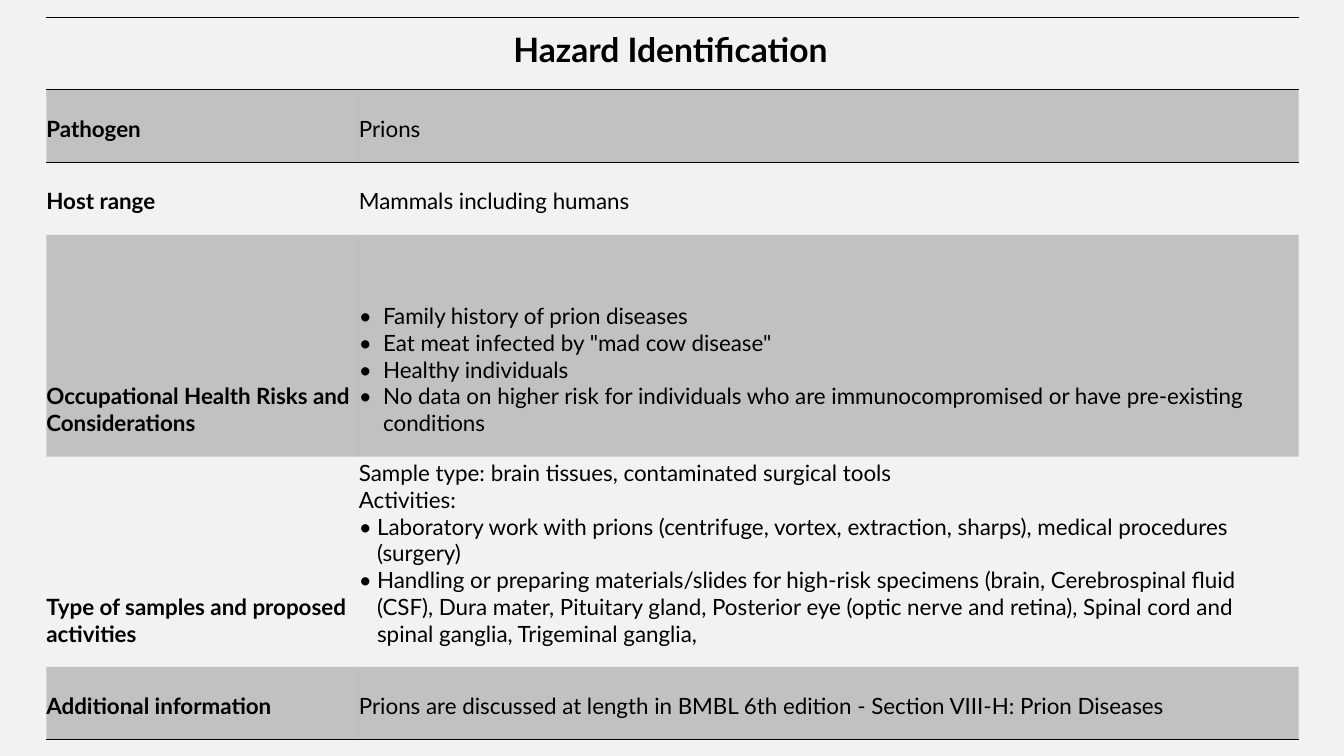
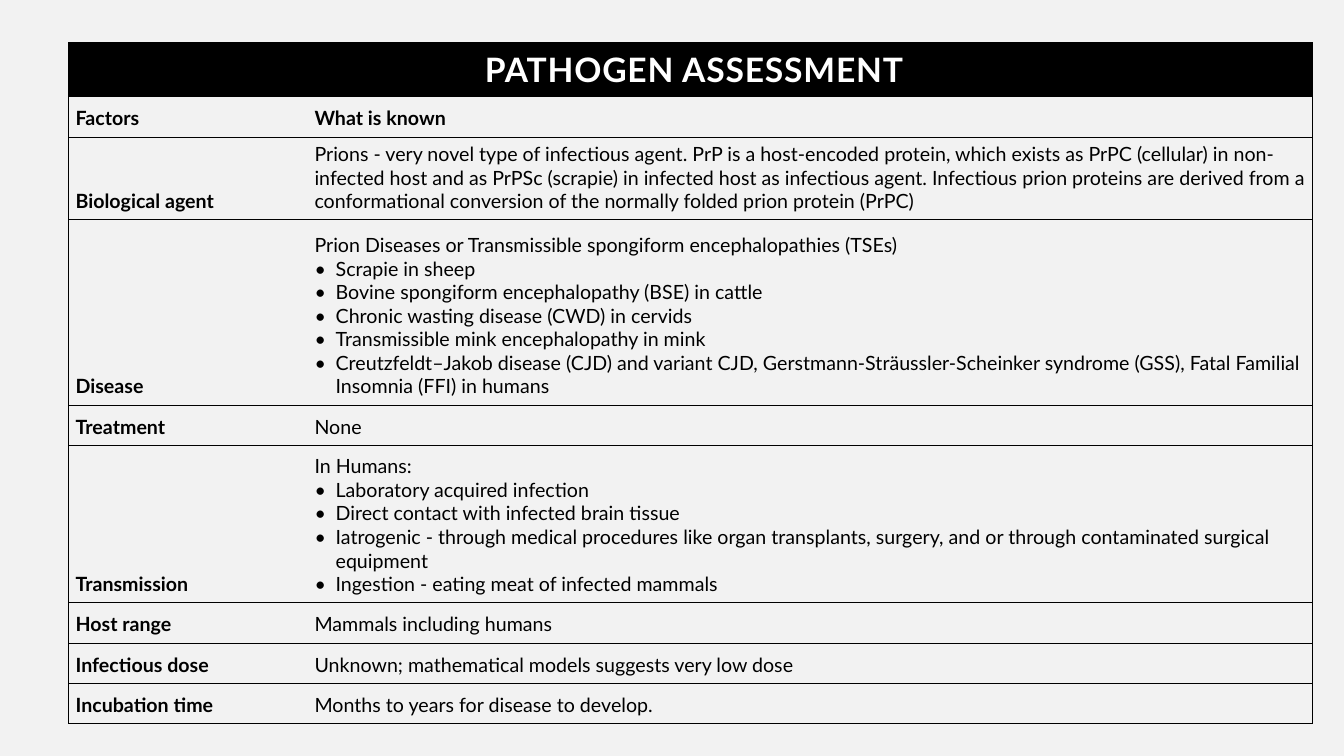
from dataclasses import dataclass

import pptx
import pptx.dml.color
import pptx.enum.text
import pptx.oxml.ns
import pptx.util
from lxml import etree

EMU_PER_PX = 9144
BLACK = pptx.dml.color.RGBColor(0x00, 0x00, 0x00)
WHITE = pptx.dml.color.RGBColor(0xFF, 0xFF, 0xFF)
PAPER = pptx.dml.color.RGBColor(0xF2, 0xF2, 0xF2)
FONT = "Lato"
TITLE_SIZE = 24
NO_STYLE_NO_GRID = "{2D5ABB26-0587-4C30-8999-92F81FD0307C}"


def px(length: int) -> pptx.util.Emu:
    return pptx.util.Emu(length * EMU_PER_PX)


@dataclass(frozen=True)
class Row:
    label: str
    height: int
    lines: tuple[str, ...] = ()
    bullets: tuple[str, ...] = ()
    bullet_gap: int = 24
    heading: bool = False


@dataclass(frozen=True)
class Sheet:
    title: str
    title_height: int
    left: int
    top: int
    columns: tuple[int, int]
    rows: tuple[Row, ...]
    text_size: int
    line_width: float
    margins: dict[str, int]
    title_margins: dict[str, int]
    title_color: pptx.dml.color.RGBColor = BLACK
    title_tracking: int = 0
    gridded: bool = False


HAZARD_MARGINS = {"margin_left": 0, "margin_top": 3, "margin_right": 4, "margin_bottom": 20}
ASSESSMENT_MARGINS = {"margin_left": 7, "margin_top": 5, "margin_right": 0, "margin_bottom": 7}

HAZARD = Sheet(
    title="Hazard Identification",
    title_height=72,
    left=46,
    top=17,
    columns=(310, 932),
    text_size=16,
    line_width=1,
    margins=HAZARD_MARGINS,
    title_margins=HAZARD_MARGINS,
    rows=(
        Row("Pathogen", 72, ("Prions",)),
        Row("Host range", 72, ("Mammals including humans",)),
        Row(
            "Occupational Health Risks and Considerations",
            220,
            bullets=(
                "Family history of prion diseases",
                'Eat meat infected by "mad cow disease"',
                "Healthy individuals",
                "No data on higher risk for individuals who are immunocompromised "
                "or have pre-existing conditions",
            ),
        ),
        Row(
            "Type of samples and proposed activities",
            208,
            ("Sample type: brain tissues, contaminated surgical tools", "Activities:"),
            (
                "Laboratory work with prions (centrifuge, vortex, extraction, sharps), "
                "medical procedures (surgery)",
                "Handling or preparing materials/slides for high-risk specimens (brain, "
                "Cerebrospinal fluid (CSF), Dura mater, Pituitary gland, Posterior eye "
                "(optic nerve and retina), Spinal cord and spinal ganglia, "
                "Trigeminal ganglia,",
            ),
            bullet_gap=18,
        ),
        Row(
            "Additional information",
            72,
            ("Prions are discussed at length in BMBL 6th edition - "
             "Section VIII-H: Prion Diseases",),
        ),
    ),
)

ASSESSMENT = Sheet(
    title="PATHOGEN ASSESSMENT",
    title_height=54,
    left=68,
    top=42,
    columns=(237, 997),
    text_size=14,
    line_width=0.5,
    margins=ASSESSMENT_MARGINS,
    title_margins={**ASSESSMENT_MARGINS, "margin_top": 7},
    title_color=WHITE,
    title_tracking=60,
    gridded=True,
    rows=(
        Row("Factors", 40, ("What is known",), heading=True),
        Row(
            "Biological agent",
            82,
            ("Prions - very novel type of infectious agent. PrP is a host-encoded "
             "protein, which exists as PrPC (cellular) in non-infected host and as "
             "PrPSc (scrapie) in infected host as infectious agent. Infectious prion "
             "proteins are derived from a conformational conversion of the normally "
             "folded prion protein (PrPC)",),
        ),
        Row(
            "Disease",
            184,
            ("Prion Diseases or Transmissible spongiform encephalopathies (TSEs)",),
            (
                "Scrapie in sheep",
                "Bovine spongiform encephalopathy (BSE) in cattle",
                "Chronic wasting disease (CWD) in cervids",
                "Transmissible mink encephalopathy in mink",
                "Creutzfeldt–Jakob disease (CJD) and variant CJD, "
                "Gerstmann-Sträussler-Scheinker syndrome (GSS), "
                "Fatal Familial Insomnia (FFI) in humans",
            ),
            bullet_gap=21,
        ),
        Row("Treatment", 40, ("None",)),
        Row(
            "Transmission",
            156,
            ("In Humans:",),
            (
                "Laboratory acquired infection",
                "Direct contact with infected brain tissue",
                "Iatrogenic - through medical procedures like organ transplants, "
                "surgery, and or through contaminated surgical equipment",
                "Ingestion - eating meat of infected mammals",
            ),
            bullet_gap=21,
        ),
        Row("Host range", 40, ("Mammals including humans",)),
        Row("Infectious dose", 40, ("Unknown; mathematical models suggests very low dose",)),
        Row("Incubation time", 40, ("Months to years for disease to develop.",)),
    ),
)


def add_child(parent, tag: str, **attributes: str):
    child = etree.SubElement(parent, pptx.oxml.ns.qn(tag))
    for key, value in attributes.items():
        child.set(key, value)
    return child


def rule_cell(cell, sides: str, width: float) -> None:
    properties = cell._tc.get_or_add_tcPr()
    for side in "LRTB":
        if side in sides:
            line = add_child(properties, f"a:ln{side}", w=str(pptx.util.Pt(width)))
            add_child(add_child(line, "a:solidFill"), "a:srgbClr", val=str(BLACK))


def fill_cell(cell, opacity: int) -> None:
    if not opacity:
        cell.fill.background()
        return
    cell.fill.solid()
    cell.fill.fore_color.rgb = BLACK
    if opacity < 100:
        color = cell._tc.tcPr.find(".//" + pptx.oxml.ns.qn("a:solidFill") + "[last()]/*")
        fill = cell._tc.tcPr.find(pptx.oxml.ns.qn("a:solidFill"))
        color = fill[0]
        add_child(color, "a:alpha", val=str(opacity * 1000))


def set_margins(cell, margins: dict[str, int]) -> None:
    cell.vertical_anchor = pptx.enum.text.MSO_ANCHOR.BOTTOM
    for name, length in margins.items():
        setattr(cell, name, px(length))


def write(paragraph, text: str, size: int, bold: bool,
          color: pptx.dml.color.RGBColor = BLACK):
    run = paragraph.add_run()
    run.text = text
    run.font.color.rgb = color
    style = {"name": FONT, "size": pptx.util.Pt(size), "bold": bold}
    for name, value in style.items():
        setattr(run.font, name, value)
    return run


def add_bullet(paragraph, gap: int) -> None:
    properties = paragraph._p.get_or_add_pPr()
    properties.set("marL", str(px(gap)))
    properties.set("indent", str(px(-gap)))
    add_child(properties, "a:buFont", typeface=FONT)
    add_child(properties, "a:buChar", char="•")


def write_details(cell, row: Row, size: int) -> None:
    frame = cell.text_frame
    for index, text in enumerate(row.lines + row.bullets):
        paragraph = frame.add_paragraph() if index else frame.paragraphs[0]
        if index >= len(row.lines):
            add_bullet(paragraph, row.bullet_gap)
        write(paragraph, text, size, row.heading)


def draw_title(table, sheet: Sheet) -> None:
    heading, spanned = table.cell(0, 0), table.cell(0, 1)
    heading.merge(spanned)
    for cell in (heading, spanned):
        rule_cell(cell, "LRTB" if sheet.gridded else "TB", sheet.line_width)
        fill_cell(cell, 100 if sheet.gridded else 0)
    set_margins(heading, sheet.title_margins)
    paragraph = heading.text_frame.paragraphs[0]
    paragraph.alignment = pptx.enum.text.PP_ALIGN.CENTER
    run = write(paragraph, sheet.title, TITLE_SIZE, True, sheet.title_color)
    run.font._element.set("spc", str(sheet.title_tracking))


def draw_row(table, sheet: Sheet, number: int, row: Row) -> None:
    label, details = table.cell(number, 0), table.cell(number, 1)
    for cell, outer_side in ((label, "L"), (details, "R")):
        sides = "T" if number == 1 else ""
        if number == len(sheet.rows):
            sides += "B"
        if sheet.gridded:
            sides = "TB" + outer_side
        rule_cell(cell, sides, sheet.line_width)
        fill_cell(cell, 20 if number % 2 and not sheet.gridded else 0)
        set_margins(cell, sheet.margins)
    write(label.text_frame.paragraphs[0], row.label, sheet.text_size, True)
    write_details(details, row, sheet.text_size)


def draw_sheet(presentation, sheet: Sheet) -> None:
    slide = presentation.slides.add_slide(presentation.slide_layouts[6])
    heights = [sheet.title_height] + [row.height for row in sheet.rows]
    table = slide.shapes.add_table(
        len(heights), len(sheet.columns), px(sheet.left), px(sheet.top),
        px(sum(sheet.columns)), px(sum(heights)),
    ).table
    table.horz_banding = False
    table.first_row = False
    table._tbl.tblPr.find(pptx.oxml.ns.qn("a:tableStyleId")).text = NO_STYLE_NO_GRID
    for column, width in zip(table.columns, sheet.columns):
        column.width = px(width)
    for table_row, height in zip(table.rows, heights):
        table_row.height = px(height)
    draw_title(table, sheet)
    for number, row in enumerate(sheet.rows, start=1):
        draw_row(table, sheet, number, row)


def main() -> None:
    presentation = pptx.Presentation()
    presentation.slide_width = px(1333)
    presentation.slide_height = px(750)
    backdrop = presentation.slide_master.background.fill
    backdrop.solid()
    backdrop.fore_color.rgb = PAPER
    for sheet in (HAZARD, ASSESSMENT):
        draw_sheet(presentation, sheet)
    presentation.save("out.pptx")


if __name__ == "__main__":
    main()
